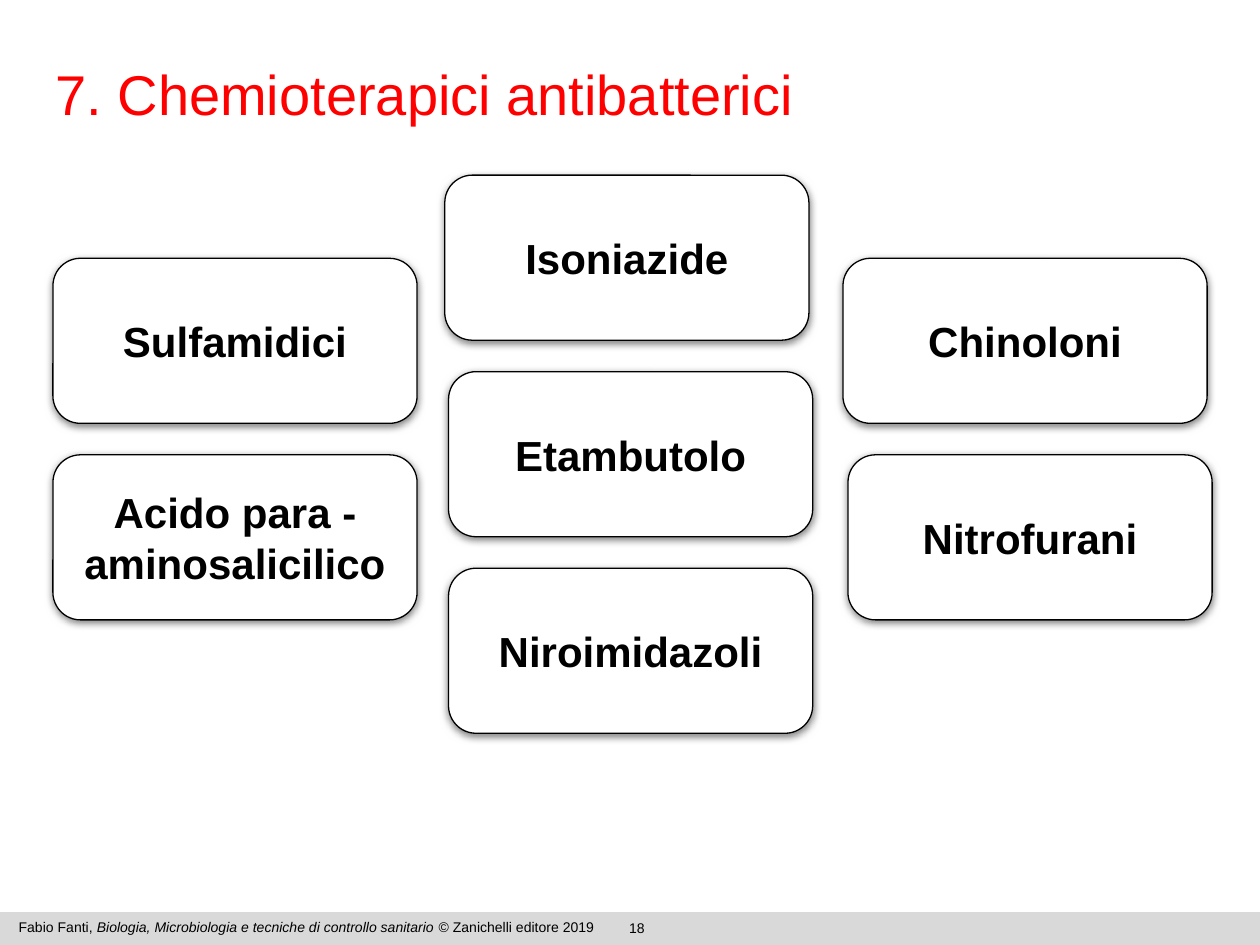
from typing import NamedTuple

from lxml import etree
from pptx import Presentation
from pptx.dml.color import RGBColor
from pptx.enum import shapes, text
from pptx.oxml import ns
from pptx.util import Inches, Pt

HUES = {"white": "FFFFFF", "black": "000000", "red": "FF0000", "grey": "D9D9D9"}
FONT = "Arial"
WIDE, HIGH, PITCH = 2.89, 1.31, 1.56


class Run(NamedTuple):
    words: str
    size: float
    hue: str = "black"
    bold: bool = False
    slant: bool = False


class Drug(NamedTuple):
    name: str
    left: float


class Stack(NamedTuple):
    top: float
    drugs: list[Drug]


STACKS = [
    Stack(2.05, [Drug("Sulfamidici", 0.42), Drug("Acido para - aminosalicilico", 0.42)]),
    Stack(1.39, [Drug("Isoniazide", 3.53), Drug("Etambutolo", 3.56),
                 Drug("Niroimidazoli", 3.56)]),
    Stack(2.05, [Drug("Chinoloni", 6.69), Drug("Nitrofurani", 6.73)]),
]


def tint(hue: str) -> RGBColor:
    return RGBColor.from_string(HUES[hue])


def paint(shape, fill: str, line: str | None = None) -> None:
    shape.fill.solid()
    shape.fill.fore_color.rgb = tint(fill)
    if line:
        shape.line.color.rgb = tint(line)
        shape.line.width = Pt(0.75)
    else:
        shape.line.fill.background()


def write(shape, runs: list[Run], align=text.PP_ALIGN.LEFT,
          anchor=text.MSO_ANCHOR.TOP, pad: tuple[float, float] = (0.1, 0.05)) -> None:
    frame = shape.text_frame
    frame.word_wrap = True
    frame.auto_size = text.MSO_AUTO_SIZE.NONE
    frame.vertical_anchor = anchor
    frame.margin_left = frame.margin_right = Inches(pad[0])
    frame.margin_top = frame.margin_bottom = Inches(pad[1])
    para = frame.paragraphs[0]
    para.alignment = align
    for item in runs:
        run = para.add_run()
        run.text = item.words
        font = run.font
        font.name, font.size = FONT, Pt(item.size)
        font.bold, font.italic = item.bold, item.slant
        font.color.rgb = tint(item.hue)


def shade(shape) -> None:
    shape.shadow.inherit = False
    group = shape.element.spPr.find(ns.qn("a:effectLst"))
    outer = etree.SubElement(group, ns.qn("a:outerShdw"), blurRad=str(Pt(4.5)),
                             dist=str(Pt(1.5)), dir="5400000", rotWithShape="0")
    color = etree.SubElement(outer, ns.qn("a:srgbClr"), val=HUES["black"])
    etree.SubElement(color, ns.qn("a:alpha"), val="50000")


def box(slide, drug: Drug, top: float) -> None:
    shape = slide.shapes.add_shape(
        shapes.MSO_SHAPE.ROUNDED_RECTANGLE,
        Inches(drug.left), Inches(top), Inches(WIDE), Inches(HIGH))
    shape.adjustments[0] = 0.167
    paint(shape, "white", "black")
    shade(shape)
    write(shape, [Run(drug.name, 24, bold=True)], text.PP_ALIGN.CENTER,
          text.MSO_ANCHOR.MIDDLE, (0.1, 0.1))


def head(slide) -> None:
    title = slide.shapes.title
    title.left, title.top = Inches(0.35), Inches(0.42)
    title.width, title.height = Inches(9.65), Inches(0.97)
    paint(title, "white", "white")
    write(title, [Run("7. Chemioterapici antibatterici", 32, "red")], pad=(0.09, 0.05))


def foot(slide) -> None:
    band = slide.shapes.add_shape(shapes.MSO_SHAPE.RECTANGLE, Inches(0), Inches(7.24),
                                  Inches(10), Inches(0.26))
    band.shadow.inherit = False
    paint(band, "grey")
    page = slide.shapes.add_textbox(Inches(3.94), Inches(7.25), Inches(2.23), Inches(0.17))
    write(page, [Run("18", 8)], text.PP_ALIGN.CENTER)
    note = slide.shapes.add_textbox(Inches(0.05), Inches(7.24), Inches(5.04), Inches(0.24))
    write(note, [
        Run("Fabio Fanti, ", 8),
        Run("Biologia, Microbiologia e tecniche di controllo sanitario", 8, slant=True),
        Run(" © Zanichelli editore 2019", 8),
    ])


def main() -> None:
    deck = Presentation()
    deck.slide_width, deck.slide_height = Inches(10), Inches(7.5)
    slide = deck.slides.add_slide(deck.slide_layouts[5])
    head(slide)
    foot(slide)
    for stack in STACKS:
        for row, drug in enumerate(stack.drugs):
            box(slide, drug, stack.top + row * PITCH)
    deck.save("out.pptx")


if __name__ == "__main__":
    main()
